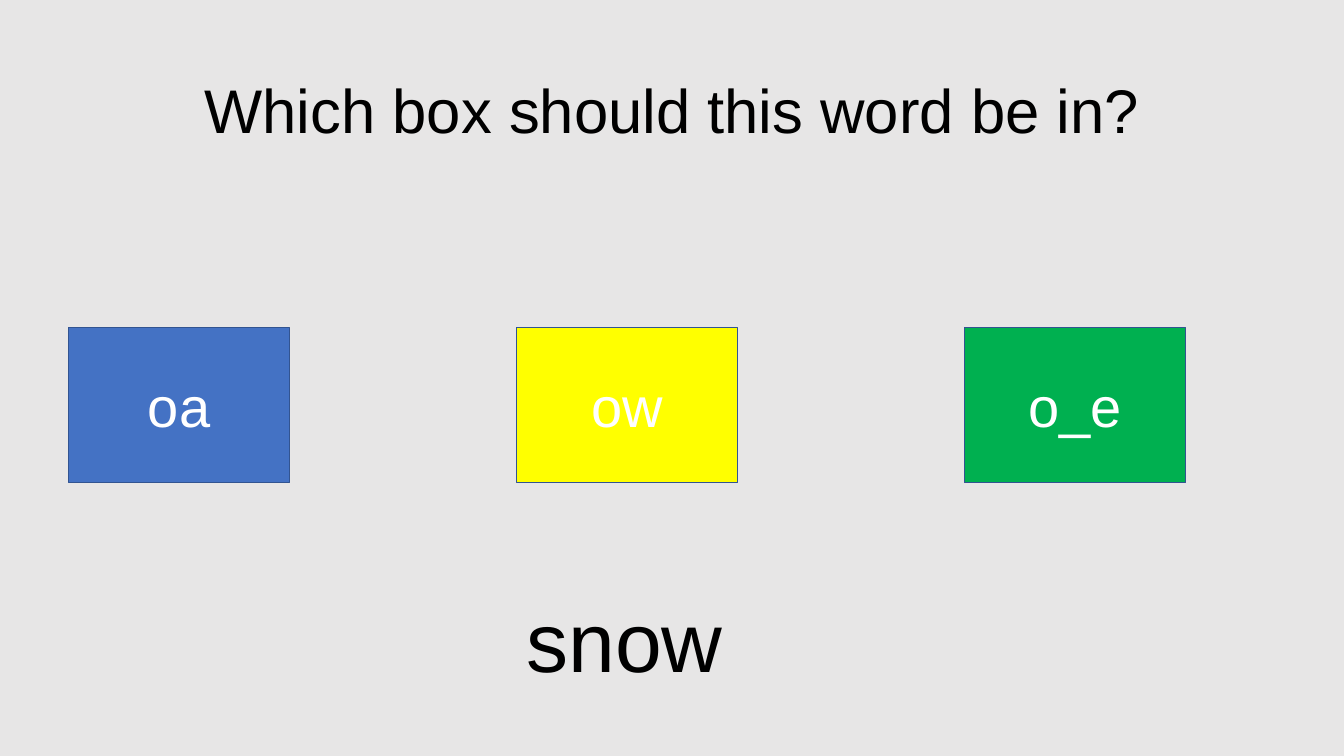
from pptx import Presentation
from pptx import util as u
from pptx.dml.color import RGBColor
from pptx.enum import shapes, text

SLIDE_W, SLIDE_H = 13.33, 7.5
COLUMN_W = SLIDE_W / 3
MARGIN = 0.68
BOX_TOP, BOX_W, BOX_H = 3.25, 2.19, 1.54

BACKGROUND = RGBColor(0xE7, 0xE6, 0xE6)
BLACK = RGBColor(0x00, 0x00, 0x00)
WHITE = RGBColor(0xFF, 0xFF, 0xFF)
BLUE = RGBColor(0x44, 0x72, 0xC4)
YELLOW = RGBColor(0xFF, 0xFF, 0x00)
GREEN = RGBColor(0x00, 0xB0, 0x50)
OUTLINE = RGBColor(0x32, 0x54, 0x91)

SPELLINGS = [("oa", BLUE), ("ow", YELLOW), ("o_e", GREEN)]


def column_left(column):
    return MARGIN + column * COLUMN_W


def write(frame, wording, *, size, color=BLACK, align=text.PP_ALIGN.CENTER,
          anchor=text.MSO_ANCHOR.MIDDLE, line_spacing=1.0):
    frame.word_wrap = True
    frame.vertical_anchor = anchor
    paragraph = frame.paragraphs[0]
    paragraph.alignment = align
    paragraph.line_spacing = line_spacing
    run = paragraph.add_run()
    run.text = wording
    run.font.name = "Arial"
    run.font.size = u.Pt(size)
    run.font.color.rgb = color


def add_label(slide, wording, left, top, width, height, **style):
    label = slide.shapes.add_textbox(*map(u.Inches, (left, top, width, height)))
    write(label.text_frame, wording, **style)
    return label


def add_spelling_box(slide, column, spelling, fill):
    box = slide.shapes.add_shape(
        shapes.MSO_SHAPE.RECTANGLE,
        *map(u.Inches, (column_left(column), BOX_TOP, BOX_W, BOX_H)))
    box.shadow.inherit = False
    box.fill.solid()
    box.fill.fore_color.rgb = fill
    box.line.color.rgb = OUTLINE
    box.line.width = u.Pt(1)
    write(box.text_frame, spelling, size=40, color=WHITE)


def main():
    prs = Presentation()
    prs.slide_width, prs.slide_height = u.Inches(SLIDE_W), u.Inches(SLIDE_H)
    slide = prs.slides.add_slide(prs.slide_layouts[6])
    slide.background.fill.solid()
    slide.background.fill.fore_color.rgb = BACKGROUND

    add_label(slide, "Which box should this word be in?",
              0.92, 0.4, 11.5, 1.45, size=44, line_spacing=0.9)
    for column, (spelling, fill) in enumerate(SPELLINGS):
        add_spelling_box(slide, column, spelling, fill)
    word = add_label(slide, "snow", column_left(1), 5.79, 2.42, 1.11, size=60,
                     align=text.PP_ALIGN.LEFT, anchor=text.MSO_ANCHOR.TOP)
    word.text_frame.auto_size = text.MSO_AUTO_SIZE.SHAPE_TO_FIT_TEXT

    prs.save("out.pptx")


if __name__ == "__main__":
    main()
